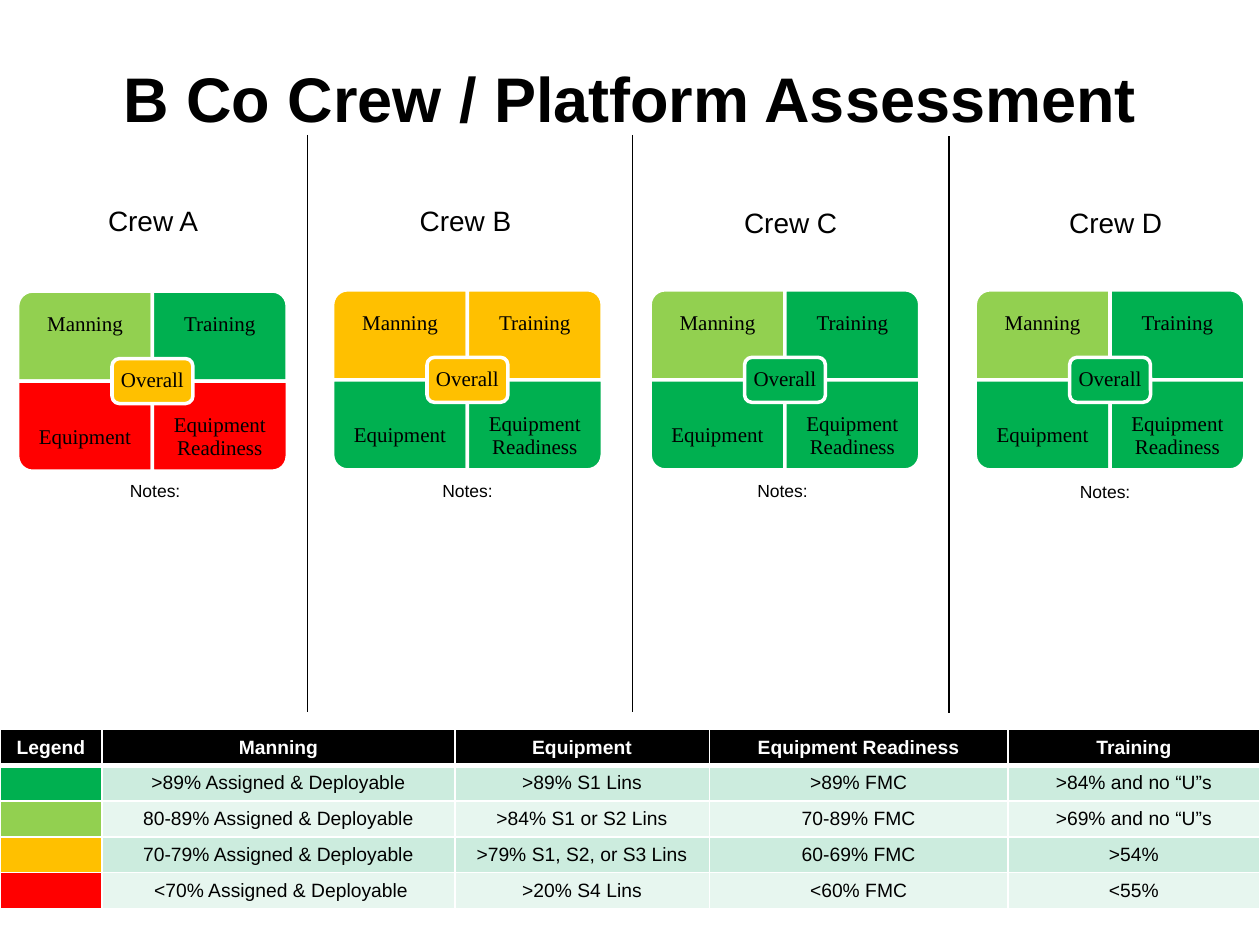
from dataclasses import dataclass

from lxml import etree
from pptx import Presentation
from pptx.dml.color import RGBColor
from pptx.enum.shapes import MSO_CONNECTOR, MSO_SHAPE
from pptx.enum.text import MSO_ANCHOR, PP_ALIGN
from pptx.oxml.ns import qn
from pptx.util import Inches, Pt

CENTER = PP_ALIGN.CENTER
MIDDLE, TOP = MSO_ANCHOR.MIDDLE, MSO_ANCHOR.TOP
RECTANGLE = MSO_SHAPE.RECTANGLE
ROUNDED = MSO_SHAPE.ROUNDED_RECTANGLE
ONE_ROUND_CORNER = MSO_SHAPE.ROUND_1_RECTANGLE
STRAIGHT = MSO_CONNECTOR.STRAIGHT

BLACK = RGBColor(0x00, 0x00, 0x00)
WHITE = RGBColor(0xFF, 0xFF, 0xFF)
GREEN = RGBColor(0x00, 0xB0, 0x50)
LIME = RGBColor(0x92, 0xD0, 0x50)
AMBER = RGBColor(0xFF, 0xC0, 0x00)
RED = RGBColor(0xFF, 0x00, 0x00)
BAND_DARK = RGBColor(0xCC, 0xEC, 0xDE)
BAND_LIGHT = RGBColor(0xE7, 0xF6, 0xEF)

SLIDE_WIDTH, SLIDE_HEIGHT = 10, 7.5
TITLE_FONT = {"name": "Arial", "size": Pt(36), "bold": True}
CREW_FONT = {"name": "Arial", "size": Pt(16)}
NOTES_FONT = {"name": "Arial", "size": Pt(10)}
MATRIX_FONT = {"name": "Times New Roman", "size": Pt(12)}
TABLE_FONT = {"name": "Arial", "size": Pt(11)}

# Label, column, row and rotation that turns the round corner outwards
QUADRANTS = [
    ("Manning", 0, 0, 270),
    ("Training", 1, 0, 0),
    ("Equipment", 0, 1, 180),
    ("Equipment Readiness", 1, 1, 90),
]
MATRIX_WIDTH, MATRIX_HEIGHT = 2.14, 1.43

DIVIDERS = [(2.44, 1.07), (5.02, 1.07), (7.53, 1.08)]
DIVIDER_LENGTH = 4.58

LEGEND_COLUMNS = [0.81, 2.8, 2.02, 2.37, 2]
LEGEND_HEADER = ["Legend", "Manning", "Equipment", "Equipment Readiness", "Training"]
LEGEND_ROWS = [
    (GREEN, [">89% Assigned & Deployable", ">89% S1 Lins", ">89% FMC", ">84% and no “U”s"]),
    (LIME, ["80-89% Assigned & Deployable", ">84% S1 or S2 Lins", "70-89% FMC",
            ">69% and no “U”s"]),
    (AMBER, ["70-79% Assigned & Deployable", ">79% S1, S2, or S3 Lins", "60-69% FMC", ">54%"]),
    (RED, [" <70% Assigned & Deployable", ">20% S4 Lins", "<60% FMC", "<55%"]),
]


@dataclass
class Crew:
    name: str
    heading: tuple
    matrix: tuple
    notes: tuple
    ratings: list
    overall: RGBColor


CREWS = [
    Crew("Crew A", (0, 1.56, 2.43, 0.37), (0.14, 2.31), (0.04, 3.76),
         [LIME, GREEN, RED, RED], AMBER),
    Crew("Crew B", (2.48, 1.56, 2.43, 0.37), (2.64, 2.3), (2.52, 3.76),
         [AMBER, AMBER, GREEN, GREEN], AMBER),
    Crew("Crew C", (5.12, 1.58, 2.31, 0.37), (5.16, 2.3), (5.02, 3.76),
         [LIME, GREEN, GREEN, GREEN], GREEN),
    Crew("Crew D", (7.72, 1.58, 2.27, 0.37), (7.74, 2.3), (7.58, 3.77),
         [LIME, GREEN, GREEN, GREEN], GREEN),
]


def inches(box):
    return [Inches(value) for value in box]


def write(frame, text, font, color=BLACK, line_spacing=None):
    paragraph = frame.paragraphs[0]
    paragraph.alignment = CENTER
    paragraph.line_spacing = line_spacing
    run = paragraph.add_run()
    run.text = text
    for name, value in font.items():
        setattr(run.font, name, value)
    run.font.color.rgb = color


def add_text(shapes, box, text, font, anchor=TOP, inset=None, line_spacing=None):
    frame = shapes.add_textbox(*inches(box)).text_frame
    frame.word_wrap = True
    frame.vertical_anchor = anchor
    if inset is not None:
        for side in ("left", "top", "right", "bottom"):
            setattr(frame, f"margin_{side}", Inches(inset))
    write(frame, text, font, line_spacing=line_spacing)


def add_panel(shapes, kind, box, fill, rotation=0):
    """Add a filled shape; box is the area it covers once rotated."""
    left, top, width, height = box
    if rotation % 180:
        left, top = left + (width - height) / 2, top + (height - width) / 2
        width, height = height, width
    shape = shapes.add_shape(kind, *inches((left, top, width, height)))
    shape.rotation = rotation
    shape.shadow.inherit = False
    shape.fill.solid()
    shape.fill.fore_color.rgb = fill
    shape.line.color.rgb = WHITE
    shape.line.width = Pt(2)
    return shape


def add_matrix(slide, box, ratings, overall):
    left, top, width, height = box
    shapes = slide.shapes.add_group_shape().shapes
    cell_width, cell_height = width / 2, height / 2
    text_height = cell_height * 0.75
    for (label, column, row, rotation), rating in zip(QUADRANTS, ratings):
        x, y = left + column * cell_width, top + row * cell_height
        add_panel(shapes, ONE_ROUND_CORNER, (x, y, cell_width, cell_height), rating, rotation)
        text_top = y + row * (cell_height - text_height)
        add_text(shapes, (x, text_top, cell_width, text_height), label,
                 MATRIX_FONT, MIDDLE, 0.09, 0.9)
    badge_width, badge_height = width * 0.3, height / 4
    badge = (left + (width - badge_width) / 2, top + (height - badge_height) / 2,
             badge_width, badge_height)
    add_panel(shapes, ROUNDED, badge, overall)
    add_text(shapes, badge, "Overall", MATRIX_FONT, MIDDLE, 0.05, 0.9)


def add_crew(slide, crew):
    heading = add_panel(slide.shapes, RECTANGLE, crew.heading, WHITE)
    heading.line.fill.background()
    write(heading.text_frame, crew.name, CREW_FONT)
    add_matrix(slide, (*crew.matrix, MATRIX_WIDTH, MATRIX_HEIGHT), crew.ratings, crew.overall)
    add_text(slide.shapes, (*crew.notes, 2.42, 0.44), "Notes: ", NOTES_FONT)


def add_divider(slide, x, top, length):
    line = slide.shapes.add_connector(STRAIGHT, *inches((x, top, x, top + length)))
    line.line.color.rgb = BLACK
    line.line.width = Pt(1)
    etree.SubElement(line._element.spPr, qn("a:effectLst"))


def format_cell(cell, fill, bottom_width):
    """Border lines must precede the fill in the cell properties."""
    properties = cell._tc.get_or_add_tcPr()
    for side, width in (("L", 1), ("R", 1), ("T", 1), ("B", bottom_width)):
        border = etree.SubElement(properties, qn(f"a:ln{side}"), w=str(Pt(width)))
        solid = etree.SubElement(border, qn("a:solidFill"))
        etree.SubElement(solid, qn("a:srgbClr"), val=str(WHITE))
    cell.fill.solid()
    cell.fill.fore_color.rgb = fill
    cell.vertical_anchor = MIDDLE


def add_legend(slide, box):
    row_count = len(LEGEND_ROWS) + 1
    table = slide.shapes.add_table(row_count, len(LEGEND_COLUMNS), *inches(box)).table
    for column, width in zip(table.columns, LEGEND_COLUMNS):
        column.width = Inches(width)
    for cell, text in zip(table.rows[0].cells, LEGEND_HEADER):
        format_cell(cell, BLACK, 3)
        write(cell.text_frame, text, {**TABLE_FONT, "bold": True}, WHITE)
    for row, (rating, texts) in enumerate(LEGEND_ROWS, 1):
        key, *cells = table.rows[row].cells
        format_cell(key, rating, 1)
        # Keeps the empty cell from growing the row
        etree.SubElement(key.text_frame.paragraphs[0]._p, qn("a:endParaRPr"), sz="1100")
        for cell, text in zip(cells, texts):
            format_cell(cell, BAND_DARK if row % 2 else BAND_LIGHT, 1)
            write(cell.text_frame, text, {**TABLE_FONT, "bold": False})


def main():
    presentation = Presentation()
    presentation.slide_width, presentation.slide_height = inches((SLIDE_WIDTH, SLIDE_HEIGHT))
    slide = presentation.slides.add_slide(presentation.slide_layouts[6])
    add_text(slide.shapes, (0.5, 0.3, SLIDE_WIDTH - 1, 0.95),
             "B Co Crew / Platform Assessment", TITLE_FONT, MIDDLE)
    for x, top in DIVIDERS:
        add_divider(slide, x, top, DIVIDER_LENGTH)
    for crew in CREWS:
        add_crew(slide, crew)
    add_legend(slide, (0, 5.79, SLIDE_WIDTH, 1.42))
    presentation.save("out.pptx")


if __name__ == "__main__":
    main()
